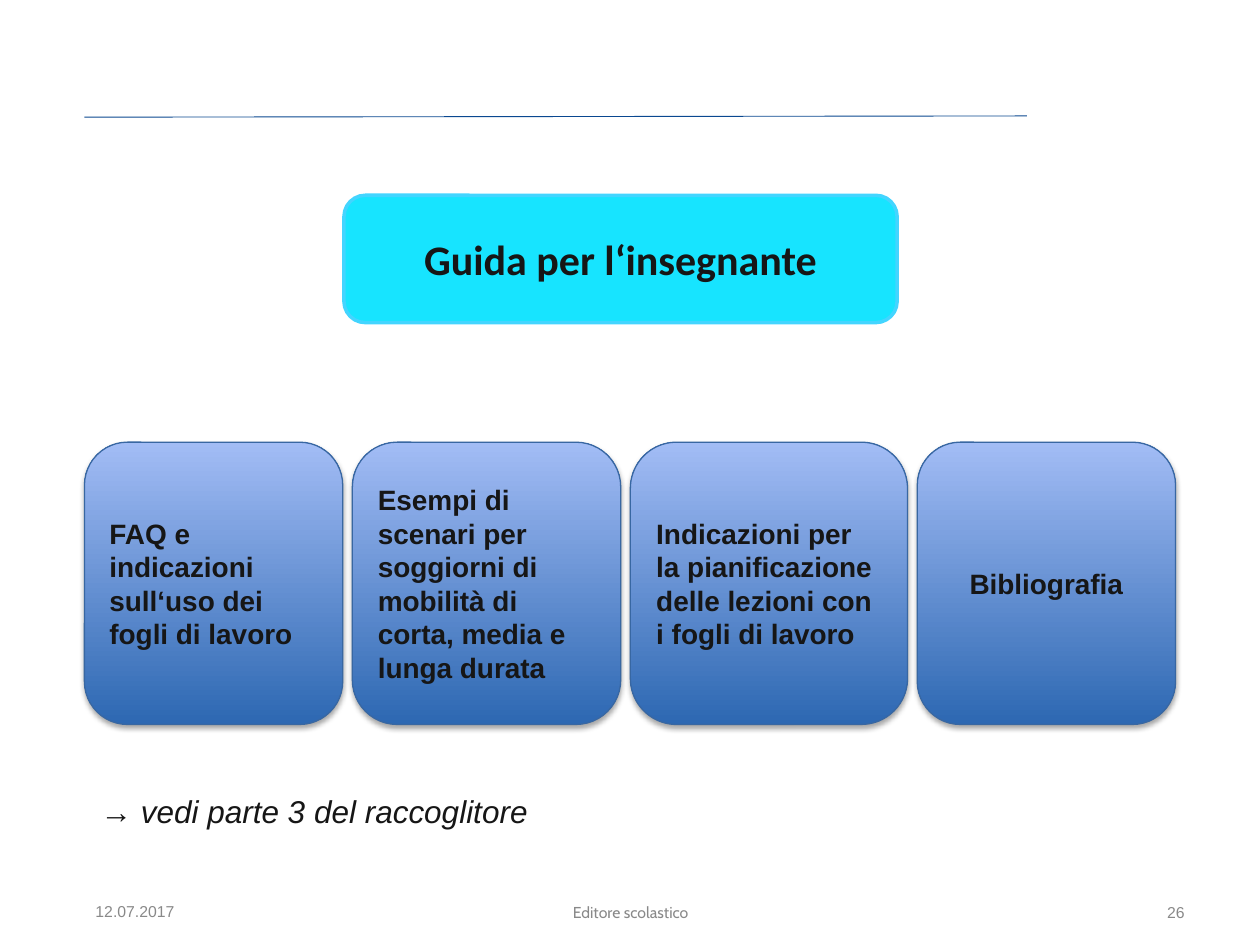
from dataclasses import dataclass

from lxml.etree import SubElement
from pptx import Presentation
from pptx.dml.color import RGBColor
from pptx.enum.shapes import MSO_CONNECTOR as Connector, MSO_SHAPE as Shape
from pptx.enum.text import MSO_ANCHOR as Anchor, PP_ALIGN as Align
from pptx.oxml.ns import qn
from pptx.util import Inches, Pt


@dataclass(frozen=True)
class Theme:
    ink: str = "161616"
    muted: str = "898989"
    rule: str = "0A4890"
    title_fill: str = "17E4FF"
    title_line: str = "43D5FF"
    card_bottom: str = "2D68B2"
    card_top: str = "A2BCF5"
    card_line: str = "3867A2"
    shadow: str = "000000"
    body_font: str = "Arial"
    title_font: str = "Calibri"
    footer_font: str = "Cabin"
    title_size: int = 24
    note_size: int = 18
    card_size: int = 16
    footer_size: int = 9


def color(value):
    return RGBColor.from_string(value)


def write(shape, text, *, size, ink, font, bold=False, italic=False,
          align=Align.LEFT, anchor=Anchor.MIDDLE, inset=0.05):
    frame = shape.text_frame
    frame.word_wrap = True
    frame.vertical_anchor = anchor
    frame.margin_top = frame.margin_bottom = Inches(inset)
    para = frame.paragraphs[0]
    para.alignment = align
    span = para.add_run()
    span.text = text
    span.font.size = Pt(size)
    span.font.name = font
    span.font.bold = bold
    span.font.italic = italic
    span.font.color.rgb = color(ink)


class Composer:
    def __init__(self, deck, theme):
        self.theme = theme
        self.width, self.height = deck.slide_width, deck.slide_height
        self.page = deck.slides.add_slide(deck.slide_layouts[6])

    def place(self, left, top, width, height):
        across, down = self.width / 100, self.height / 100
        return [round(length) for length in
                (left * across, top * down, width * across, height * down)]

    def rule(self, left, top, width, height):
        x, y, dx, dy = self.place(left, top, width, height)
        line = self.page.shapes.add_connector(Connector.STRAIGHT, x + dx, y, x, y + dy)
        line.line.color.rgb = color(self.theme.rule)
        line.line.width = Pt(0.5)
        SubElement(line._element.spPr, qn("a:effectLst"))

    def label(self, area, text, **style):
        box = self.page.shapes.add_textbox(*self.place(*area))
        write(box, text, **style)

    def footer(self, area, text, font, align):
        self.label(area, text, size=self.theme.footer_size, ink=self.theme.muted,
                   font=font, align=align)

    def rounded(self, area, line, width):
        box = self.page.shapes.add_shape(Shape.ROUNDED_RECTANGLE, *self.place(*area))
        box.shadow.inherit = False
        box.line.color.rgb = color(line)
        box.line.width = Pt(width)
        return box

    def title(self, area, text):
        theme = self.theme
        box = self.rounded(area, theme.title_line, 2)
        box.fill.solid()
        box.fill.fore_color.rgb = color(theme.title_fill)
        write(box, text, size=theme.title_size, ink=theme.ink, font=theme.title_font,
              bold=True, align=Align.CENTER)

    def card(self, area, text, align):
        theme = self.theme
        box = self.rounded(area, theme.card_line, 0.75)
        box.fill.gradient()
        box.fill.gradient_angle = 90
        for stop, shade in zip(box.fill.gradient_stops, (theme.card_bottom, theme.card_top)):
            stop.color.rgb = color(shade)
        self.cast_shadow(box)
        write(box, text, size=theme.card_size, ink=theme.ink, font=theme.body_font,
              bold=True, align=align)

    def cast_shadow(self, box):
        effects = box._element.spPr.find(qn("a:effectLst"))
        shadow = SubElement(effects, qn("a:outerShdw"), blurRad=str(Pt(3.1)),
                            dist=str(Pt(1.8)), dir="5400000", rotWithShape="0")
        shade = SubElement(shadow, qn("a:srgbClr"), val=self.theme.shadow)
        SubElement(shade, qn("a:alpha"), val="35000")

    def card_row(self, left, top, width, height, cards):
        gap = (width - sum(share for share, _, _ in cards)) / (len(cards) - 1)
        for share, text, align in cards:
            self.card((left, top, share, height), text, align)
            left += share + gap


def main():
    deck = Presentation()
    deck.slide_width, deck.slide_height = Inches(10), Inches(7.5)
    theme = Theme()
    slide = Composer(deck, theme)

    slide.rule(6.7, 12.27, 74.8, 0.13)
    slide.footer((6.6, 93.73, 23.3, 5.33), "12.07.2017", theme.body_font, Align.LEFT)
    slide.footer((34.2, 93.87, 31.7, 5.33), "Editore scolastico", theme.footer_font, Align.CENTER)
    slide.footer((71.7, 93.87, 23.3, 5.33), "26", theme.body_font, Align.RIGHT)
    slide.title((27.3, 20.67, 43.9, 13.47), "Guida per l‘insegnante")
    slide.label((7, 82.53, 87.9, 6.53), "→ vedi parte 3 del raccoglitore",
                size=theme.note_size, ink=theme.ink, font=theme.body_font,
                italic=True, anchor=Anchor.TOP, inset=0.1)
    slide.card_row(6.7, 46.8, 86.6, 29.87, [
        (20.5, "FAQ e indicazioni sull‘uso dei fogli di lavoro", Align.LEFT),
        (21.3, "Esempi di scenari per soggiorni di mobilità di corta, media e lunga durata",
         Align.LEFT),
        (22, "Indicazioni per la pianificazione delle lezioni con i fogli di lavoro", Align.LEFT),
        (20.5, "Bibliografia", Align.CENTER),
    ])
    deck.save("out.pptx")


if __name__ == "__main__":
    main()
